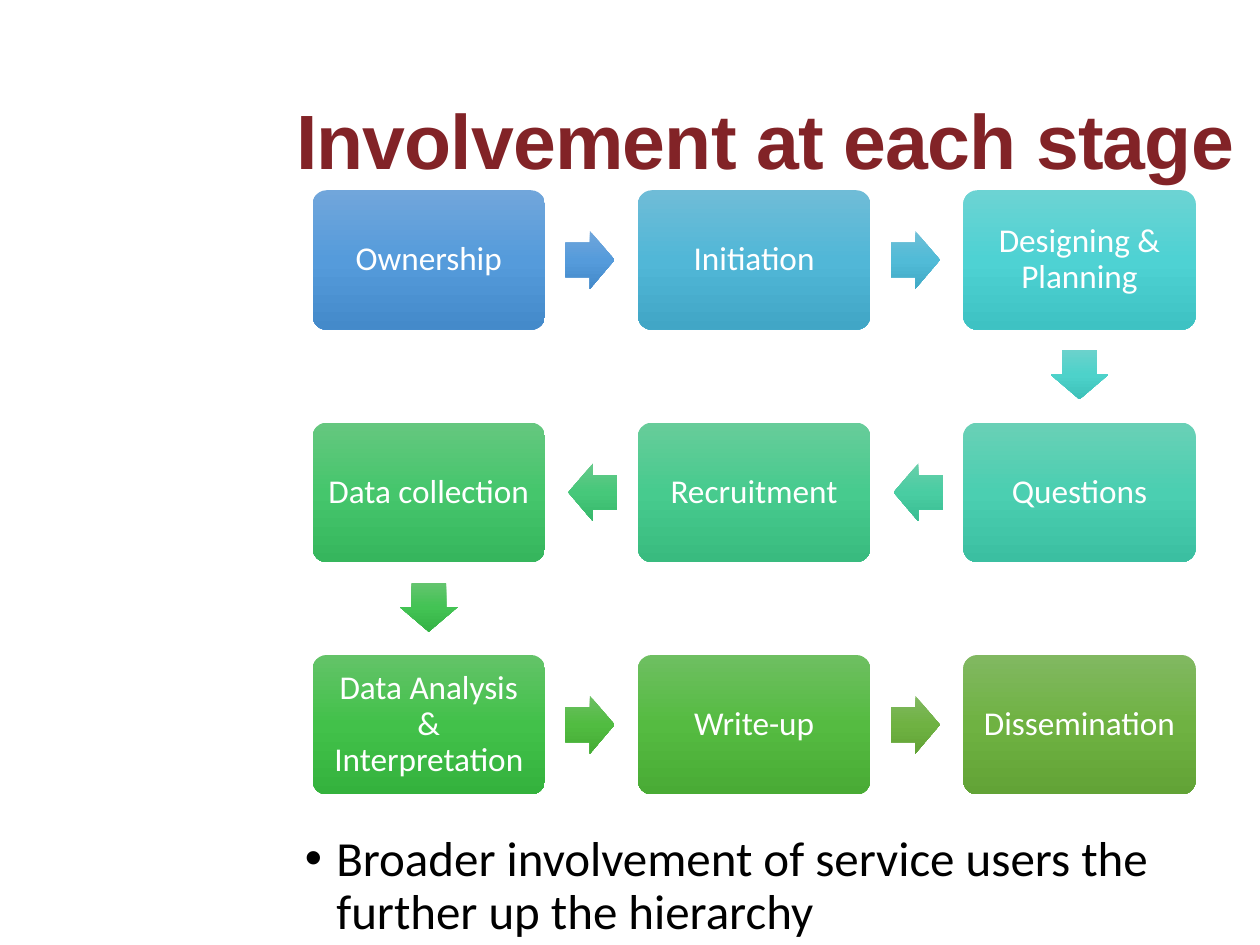
from dataclasses import dataclass

from lxml.etree import SubElement
from pptx import Presentation
from pptx.dml.color import RGBColor
from pptx.enum.shapes import MSO_SHAPE
from pptx.enum.text import MSO_ANCHOR, MSO_AUTO_SIZE, PP_ALIGN
from pptx.oxml.ns import qn
from pptx.util import Pt


@dataclass(frozen=True)
class Theme:
    title_font: str = "Arial"
    body_font: str = "Calibri"
    title_size: float = 44
    body_size: float = 28
    step_size: float = 19
    title_color: str = "822327"
    body_color: str = "000000"
    step_color: str = "FFFFFF"


THEME = Theme()

COLUMNS = 3
GRID_LEFT, GRID_TOP = 178.6, 108.7
BOX_WIDTH = 132.8
BOX_HEIGHT = 0.6 * BOX_WIDTH
GAP = 0.4 * BOX_WIDTH
ARROW_LENGTH, ARROW_BREADTH = 28.1, 33
ARROW_OFFSET = 11.7
ROTATIONS = {(1, 0): 0, (0, 1): 90, (-1, 0): 180}

# Label, box gradient, gradient of the arrow to the next step
STEPS = [
    ("Ownership", "71A6DB 559BDB 448ACA", "71A6DB 559BDB 448ACA"),
    ("Initiation", "6FBCD7 51B7D7 41A6C6", "6EBFD7 51BBD7 41AAC6"),
    ("Designing & Planning", "6CD3D3 4ED2D3 3EC2C3", "6BD2CC 4DD2CA 3DC1B9"),
    ("Questions", "69D0B6 4BCFB1 3BBFA1", "68CEAA 49CDA2 3ABD92"),
    ("Recruitment", "67CC9A 47CB8E 39BB7F", "66C98A 46C87A 37B86B"),
    ("Data collection", "65C77F 45C66C 36B65D", "64C46F 43C354 35B346"),
    ("Data Analysis & Interpretation", "63C368 42C14A 34B23D", "6CBF62 51BC41 45AC35"),
    ("Write-up", "6EBF61 55BB41 49AB35", "81B861 6FB242 62A336"),
    ("Dissemination", "81B861 6FB242 62A336", None),
]


def write_text(shape, text, *, font, size, color, bold=False, align=PP_ALIGN.LEFT,
               anchor=MSO_ANCHOR.MIDDLE, inset=None, hanging=None, tracking=None):
    frame = shape.text_frame
    frame.word_wrap = True
    frame.auto_size = MSO_AUTO_SIZE.NONE
    frame.vertical_anchor = anchor
    if inset is not None:
        frame.margin_left = frame.margin_right = Pt(inset)
        frame.margin_top = frame.margin_bottom = Pt(inset)
    paragraph = frame.paragraphs[0]
    paragraph.alignment = align
    paragraph.line_spacing = 0.9
    paragraph.space_before = Pt(0)
    if hanging is not None:
        properties = paragraph._p.get_or_add_pPr()
        properties.set("marL", str(Pt(hanging)))
        properties.set("indent", str(-Pt(hanging)))
    run = paragraph.add_run()
    run.text = text
    run.font.name = font
    run.font.size = Pt(size)
    run.font.bold = bold
    run.font.color.rgb = RGBColor.from_string(color)
    if tracking is not None:
        run._r.get_or_add_rPr().set("spc", str(round(tracking * 100)))


def place(shape, left, top, width, height):
    shape.left, shape.top = Pt(left), Pt(top)
    shape.width, shape.height = Pt(width), Pt(height)


def fill_gradient(shape, colors):
    """Fill from top to bottom with evenly spaced colours, whatever the rotation."""
    shape.fill.gradient()
    shape.fill.gradient_angle = 270
    gradient = shape._element.spPr.find(qn("a:gradFill"))
    gradient.set("rotWithShape", "0")
    stops = gradient.find(qn("a:gsLst"))
    for stop in list(stops):
        stops.remove(stop)
    for position, color in zip((0, 50000, 100000), colors.split()):
        stop = SubElement(stops, qn("a:gs"), pos=str(position))
        SubElement(stop, qn("a:srgbClr"), val=color)


def add_gradient_shape(slide, kind, center, width, height, colors, adjustments):
    shape = slide.shapes.add_shape(
        kind, Pt(center[0] - width / 2), Pt(center[1] - height / 2), Pt(width), Pt(height))
    for index, value in enumerate(adjustments):
        shape.adjustments[index] = value
    shape.shadow.inherit = False
    shape.line.fill.background()
    fill_gradient(shape, colors)
    return shape


def grid_cell(index):
    """Column and row of a step; every second row runs right to left."""
    row, column = divmod(index, COLUMNS)
    return (COLUMNS - 1 - column if row % 2 else column), row


def box_center(index):
    column, row = grid_cell(index)
    return (GRID_LEFT + column * (BOX_WIDTH + GAP) + BOX_WIDTH / 2,
            GRID_TOP + row * (BOX_HEIGHT + GAP) + BOX_HEIGHT / 2)


def add_step(slide, index, label, colors):
    box = add_gradient_shape(slide, MSO_SHAPE.ROUNDED_RECTANGLE, box_center(index),
                             BOX_WIDTH, BOX_HEIGHT, colors, [0.1])
    write_text(box, label, font=THEME.body_font, size=THEME.step_size,
               color=THEME.step_color, align=PP_ALIGN.CENTER, inset=5.7)


def add_step_arrow(slide, index, colors):
    """Add the arrow from a step towards the one after it."""
    column, row = grid_cell(index)
    next_column, next_row = grid_cell(index + 1)
    across, down = next_column - column, next_row - row
    reach = ARROW_OFFSET + ARROW_LENGTH / 2
    x, y = box_center(index)
    center = (x + across * (BOX_WIDTH / 2 + reach), y + down * (BOX_HEIGHT / 2 + reach))
    arrow = add_gradient_shape(slide, MSO_SHAPE.RIGHT_ARROW, center,
                               ARROW_LENGTH, ARROW_BREADTH, colors, [0.6, 0.5])
    arrow.rotation = ROTATIONS[across, down]


def main():
    presentation = Presentation()
    presentation.slide_width, presentation.slide_height = Pt(720), Pt(540)
    slide = presentation.slides.add_slide(presentation.slide_layouts[1])

    title = slide.shapes.title
    place(title, 162, 30.2, 568, 104.4)
    write_text(title, "Involvement at each stage", font=THEME.title_font,
               size=THEME.title_size, color=THEME.title_color, bold=True, tracking=-0.5)

    body = slide.placeholders[1]
    place(body, 167, 473, 558, 88.6)
    write_text(body, "Broader involvement of service users the further up the hierarchy",
               font=THEME.body_font, size=THEME.body_size, color=THEME.body_color,
               anchor=MSO_ANCHOR.TOP, hanging=18)

    for index, (label, box_colors, arrow_colors) in enumerate(STEPS):
        add_step(slide, index, label, box_colors)
        if arrow_colors:
            add_step_arrow(slide, index, arrow_colors)

    presentation.save("out.pptx")


if __name__ == "__main__":
    main()
